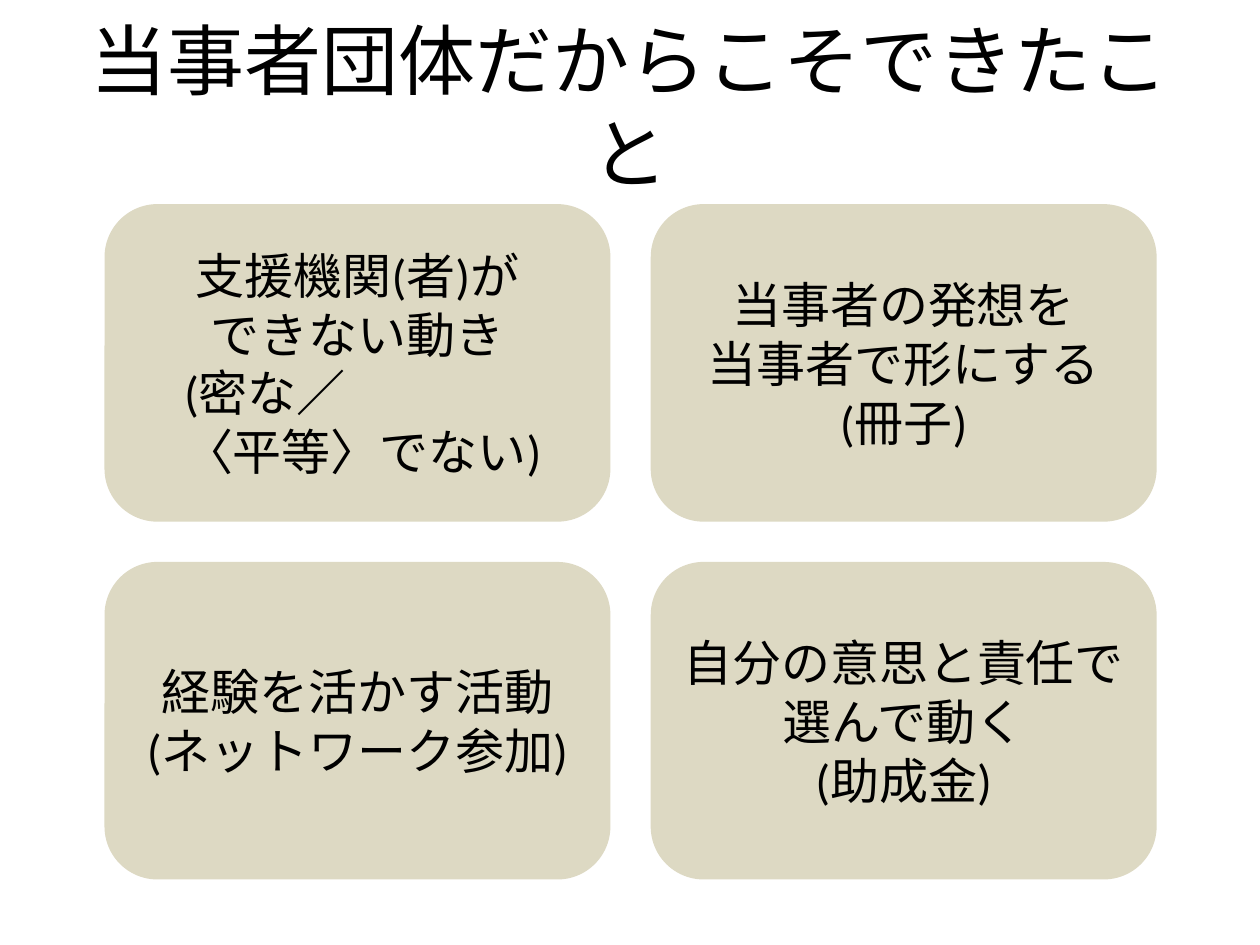
"""Build a slide with a title above a two-by-two grid of rounded cards."""
import pptx
import pptx.dml.color
import pptx.enum.shapes
import pptx.enum.text
import pptx.util

BLACK = pptx.dml.color.RGBColor(0x00, 0x00, 0x00)
BEIGE = pptx.dml.color.RGBColor(0xDD, 0xD9, 0xC3)
FONT = "Calibri"
CENTER = pptx.enum.text.PP_ALIGN.CENTER
JUSTIFY = pptx.enum.text.PP_ALIGN.JUSTIFY
Inches = pptx.util.Inches

TITLE = "当事者団体だからこそできたこと"
COLUMNS = 2
CARDS = [
    [("支援機関(者)が", CENTER), ("できない動き", CENTER),
     ("　(密な／", JUSTIFY), ("　〈平等〉でない)", JUSTIFY)],
    [("当事者の発想を", CENTER), ("当事者で形にする", CENTER), ("(冊子)", CENTER)],
    [("経験を活かす活動", CENTER), ("(ネットワーク参加)", CENTER)],
    [("自分の意思と責任で選んで動く", CENTER), ("(助成金)", CENTER)],
]


def write_lines(text_frame, lines, size):
    """Write each line as one paragraph with its own alignment."""
    text_frame.word_wrap = True
    text_frame.vertical_anchor = pptx.enum.text.MSO_ANCHOR.MIDDLE
    for index, (text, alignment) in enumerate(lines):
        paragraph = text_frame.add_paragraph() if index else text_frame.paragraphs[0]
        paragraph.alignment = alignment
        run = paragraph.add_run()
        run.text = text
        run.font.name = FONT
        run.font.size = pptx.util.Pt(size)
        run.font.color.rgb = BLACK


def place_title(slide, left, top, width, height):
    """Move the title placeholder into the box and fill it."""
    title = slide.shapes.title
    title.left, title.top, title.width, title.height = left, top, width, height
    write_lines(title.text_frame, [(TITLE, CENTER)], 44)


def add_card(slide, lines, left, top, width, height):
    """Add one rounded card with its text in the box."""
    card = slide.shapes.add_shape(
        pptx.enum.shapes.MSO_SHAPE.ROUNDED_RECTANGLE, left, top, width, height)
    card.shadow.inherit = False
    card.fill.solid()
    card.fill.fore_color.rgb = BEIGE
    card.line.fill.background()
    frame = card.text_frame
    frame.margin_left = frame.margin_right = Inches(0.12)
    frame.margin_top = frame.margin_bottom = Inches(0.12)
    write_lines(frame, lines, 28)


def add_card_grid(slide, left, top, width, height, gap):
    """Share the box among the cards, with equal gaps between them."""
    rows = len(CARDS) // COLUMNS
    card_width = (width - gap * (COLUMNS - 1)) // COLUMNS
    card_height = (height - gap * (rows - 1)) // rows
    for index, lines in enumerate(CARDS):
        row, column = divmod(index, COLUMNS)
        add_card(slide, lines, left + column * (card_width + gap),
                 top + row * (card_height + gap), card_width, card_height)


def main():
    """Build and save the presentation."""
    presentation = pptx.Presentation()
    presentation.slide_width = Inches(10)
    presentation.slide_height = Inches(7.5)
    slide = presentation.slides.add_slide(presentation.slide_layouts[5])
    place_title(slide, Inches(0.5), Inches(0.21), Inches(9), Inches(1.25))
    add_card_grid(slide, Inches(0.83), Inches(1.62), Inches(8.35), Inches(5.36),
                  Inches(0.32))
    presentation.save("out.pptx")


if __name__ == "__main__":
    main()
